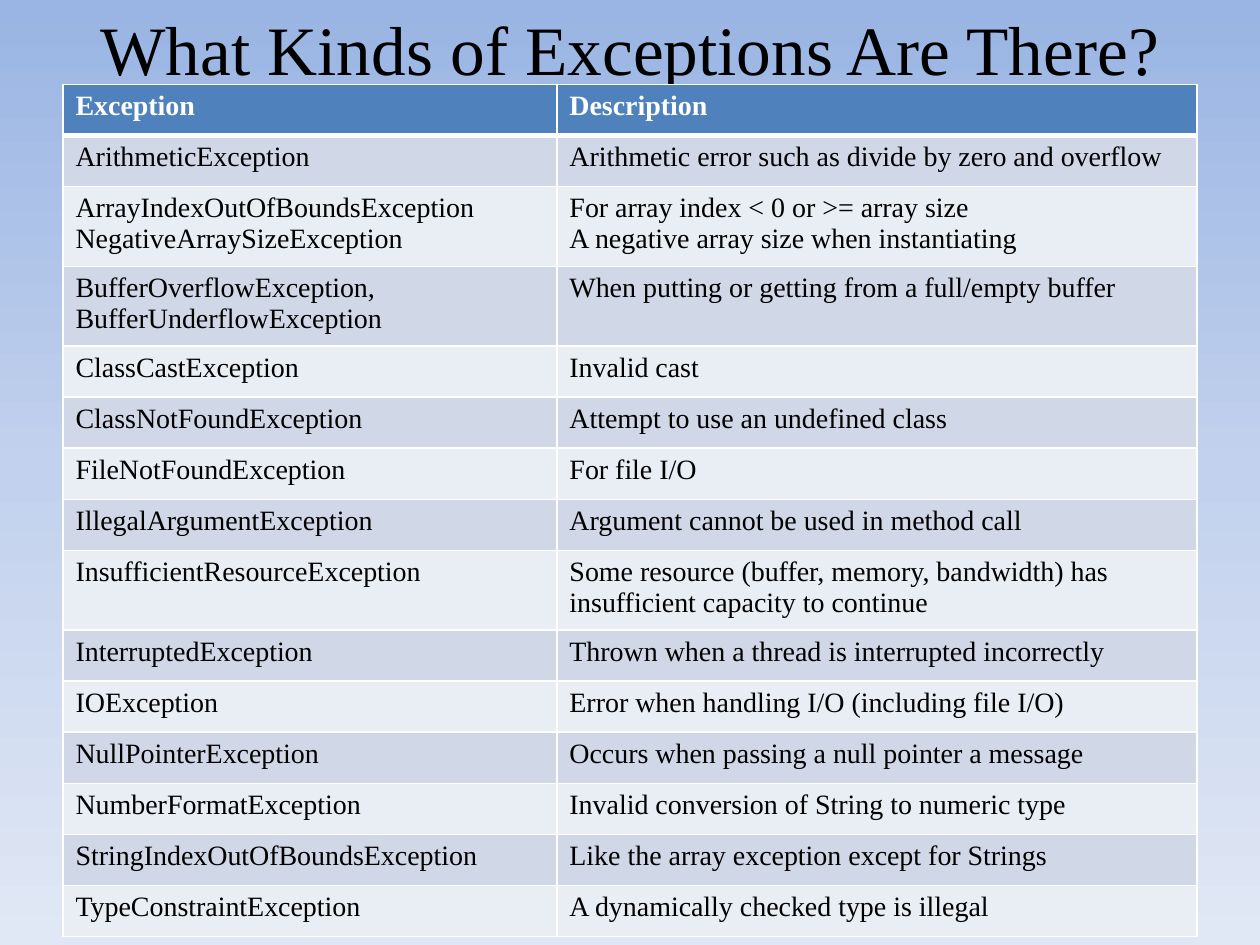
from copy import deepcopy

from lxml import etree
from pptx import Presentation
from pptx.dml.color import RGBColor
from pptx.enum.text import MSO_ANCHOR, PP_ALIGN
from pptx.oxml.ns import qn
from pptx.util import Inches, Pt

FONT = "Times New Roman"
COLORS = {
    "sky_top": "9AB5E4",
    "sky_middle": "C2D1ED",
    "sky_bottom": "E1E8F5",
    "header": "4F81BD",
    "odd_row": "D0D8E8",
    "even_row": "E9EDF4",
    "black": "000000",
    "white": "FFFFFF",
}
ROWS = [
    ("Exception", "Description"),
    ("ArithmeticException", "Arithmetic error such as divide by zero and overflow"),
    ("ArrayIndexOutOfBoundsException\nNegativeArraySizeException",
     "For array index < 0 or >= array size\nA negative array size when instantiating"),
    ("BufferOverflowException, BufferUnderflowException",
     "When putting or getting from a full/empty buffer"),
    ("ClassCastException", "Invalid cast"),
    ("ClassNotFoundException", "Attempt to use an undefined class"),
    ("FileNotFoundException", "For file I/O"),
    ("IllegalArgumentException", "Argument cannot be used in method call"),
    ("InsufficientResourceException",
     "Some resource (buffer, memory, bandwidth) has insufficient capacity to continue"),
    ("InterruptedException", "Thrown when a thread is interrupted incorrectly"),
    ("IOException", "Error when handling I/O (including file I/O)"),
    ("NullPointerException", "Occurs when passing a null pointer a message"),
    ("NumberFormatException", "Invalid conversion of String to numeric type"),
    ("StringIndexOutOfBoundsException", "Like the array exception except for Strings"),
    ("TypeConstraintException", "A dynamically checked type is illegal"),
]


def format_text(text_frame, size, color, bold=False):
    for paragraph in text_frame.paragraphs:
        for run in paragraph.runs:
            run.font.name = FONT
            run.font.size = Pt(size)
            run.font.bold = bold
            run.font.color.rgb = RGBColor.from_string(COLORS[color])


def set_borders(cell, top, bottom):
    """Draw white cell borders, 1 pt at the sides; top and bottom in points."""
    properties = cell._tc.get_or_add_tcPr()
    sides = [("a:lnL", 1), ("a:lnR", 1), ("a:lnT", top), ("a:lnB", bottom)]
    for position, (tag, width) in enumerate(sides):
        line = etree.Element(qn(tag), w=str(Pt(width)))
        fill = etree.SubElement(line, qn("a:solidFill"))
        etree.SubElement(fill, qn("a:srgbClr"), val=COLORS["white"])
        properties.insert(position, line)


presentation = Presentation()
presentation.slide_width = Inches(10)
presentation.slide_height = Inches(7.5)
slide = presentation.slides.add_slide(presentation.slide_layouts[6])

# Background: three-stop gradient from top to bottom
background = slide.background.fill
background.gradient()
background.gradient_angle = 270
stop_list = next(slide.element.iter(qn("a:gsLst")))
stop_list.insert(1, deepcopy(stop_list[0]))
sky = ["sky_top", "sky_middle", "sky_bottom"]
for stop, name, position in zip(background.gradient_stops, sky, [0, 0.5, 1]):
    stop.color.rgb = RGBColor.from_string(COLORS[name])
    stop.position = position

# Title
title = slide.shapes.add_textbox(Inches(0.5), Inches(-0.25), Inches(9), Inches(1.25))
title.text_frame.word_wrap = True
title.text_frame.vertical_anchor = MSO_ANCHOR.MIDDLE
title.text_frame.text = "What Kinds of Exceptions Are There?"
title.text_frame.paragraphs[0].alignment = PP_ALIGN.CENTER
format_text(title.text_frame, 39.6, "black")

# Table of exceptions: equal rows that grow where the text wraps
table = slide.shapes.add_table(
    len(ROWS), 2, Inches(0.5), Inches(0.67), Inches(9), Inches(6.08)).table
table.columns[0].width = Inches(3.92)
table.columns[1].width = Inches(5.08)
for row_index, texts in enumerate(ROWS):
    is_header = row_index == 0
    band = "header" if is_header else "odd_row" if row_index % 2 else "even_row"
    for column_index, text in enumerate(texts):
        cell = table.cell(row_index, column_index)
        cell.text_frame.text = text
        format_text(cell.text_frame, 16, "white" if is_header else "black", is_header)
        cell.fill.solid()
        cell.fill.fore_color.rgb = RGBColor.from_string(COLORS[band])
        set_borders(cell, top=3 if row_index == 1 else 1, bottom=3 if is_header else 1)

presentation.save("out.pptx")
